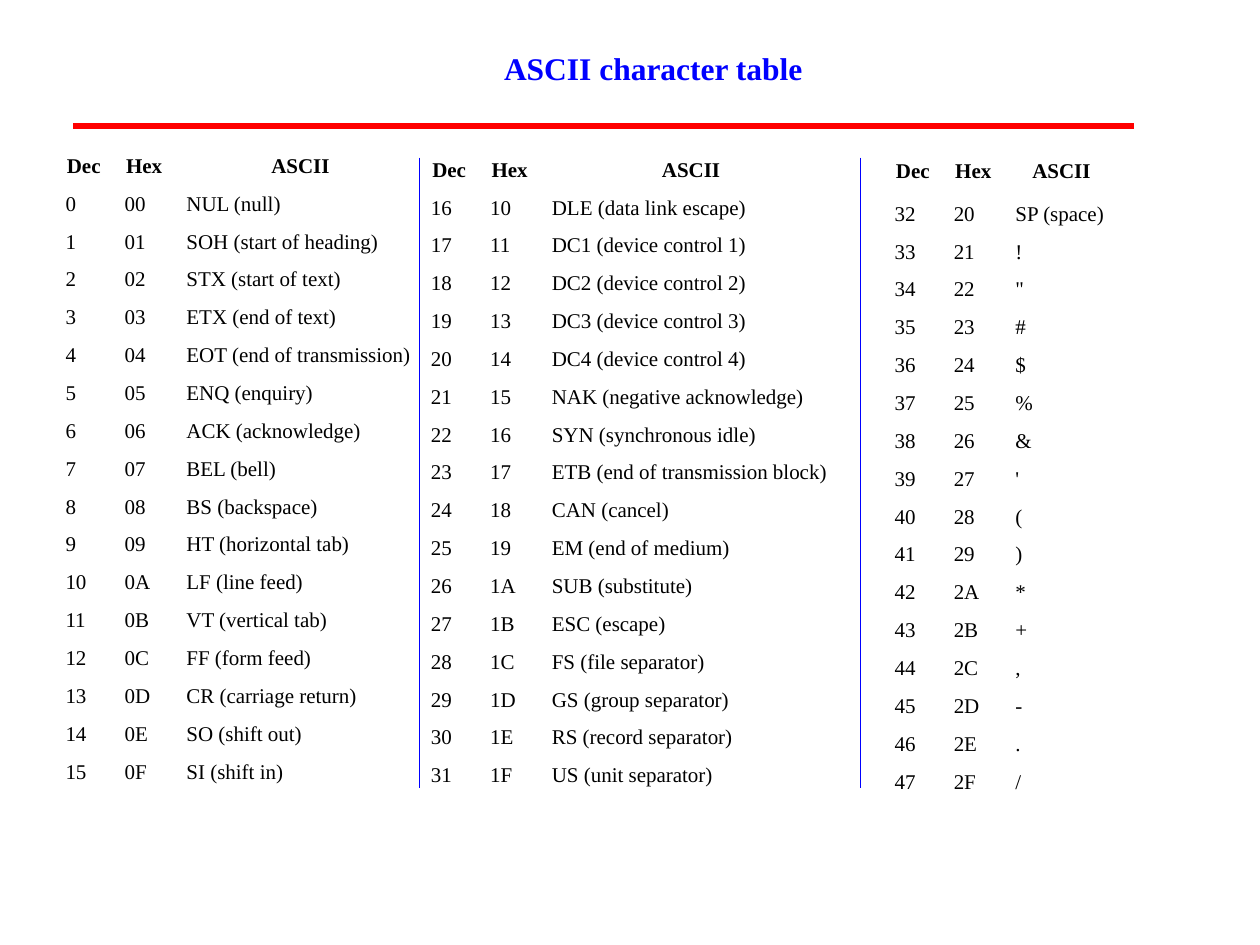
from pptx import Presentation
from pptx.dml.color import RGBColor
from pptx.enum.shapes import MSO_CONNECTOR
from pptx.enum.text import MSO_ANCHOR, PP_ALIGN
from pptx.oxml.ns import qn
from pptx.util import Inches, Pt
from lxml import etree

STRAIGHT = MSO_CONNECTOR.STRAIGHT
TOP, MIDDLE = MSO_ANCHOR.TOP, MSO_ANCHOR.MIDDLE
LEFT, CENTER = PP_ALIGN.LEFT, PP_ALIGN.CENTER
BLACK = RGBColor(0x00, 0x00, 0x00)
BLUE = RGBColor(0x00, 0x00, 0xFF)
RED = RGBColor(0xFF, 0x00, 0x00)
FONT = "Times New Roman"

TITLE = "ASCII character table"
HEADERS = ["Dec", "Hex", "ASCII"]
CONTROLS = [
    "NUL (null)", "SOH (start of heading)", "STX (start of text)",
    "ETX (end of text)", "EOT (end of transmission)", "ENQ (enquiry)",
    "ACK (acknowledge)", "BEL (bell)", "BS (backspace)",
    "HT (horizontal tab)", "LF (line feed)", "VT (vertical tab)",
    "FF (form feed)", "CR (carriage return)", "SO (shift out)",
    "SI (shift in)", "DLE (data link escape)", "DC1 (device control 1)",
    "DC2 (device control 2)", "DC3 (device control 3)",
    "DC4 (device control 4)", "NAK (negative acknowledge)",
    "SYN (synchronous idle)", "ETB (end of transmission block)",
    "CAN (cancel)", "EM (end of medium)", "SUB (substitute)",
    "ESC (escape)", "FS (file separator)", "GS (group separator)",
    "RS (record separator)", "US (unit separator)",
]
NAMES = CONTROLS + ["SP (space)"] + list("!\"#$%&'()*+,-./")

PER_TABLE = 16
BODY_H = 4.81
DEC_W, HEX_W = 0.47, 0.49
TABLES = [
    dict(left=0.42, top=1.17, name_w=1.99, head_h=0.3),
    dict(left=3.32, top=1.2, name_w=2.39, head_h=0.3),
    dict(left=7, top=1.17, name_w=0.91, head_h=0.38),
]
RULES = [
    ((0.58, 1), (9, 1), RED, 3),
    ((3.33, 1.25), (3.33, 6.25), BLUE, 0.75),
    ((6.83, 1.25), (6.83, 6.25), BLUE, 0.75),
]


def write(tf, text, size=12, color=BLACK, bold=False, align=LEFT):
    p = tf.paragraphs[0]
    p.alignment = align
    r = p.add_run()
    r.text = text
    r.font.name = FONT
    r.font.size = Pt(size)
    r.font.bold = bold
    r.font.color.rgb = color


def add_code_table(s, first, left, top, name_w, head_h):
    codes = range(first, first + PER_TABLE)
    rows = [HEADERS] + [[str(c), f"{c:02X}", NAMES[c]] for c in codes]
    widths = [DEC_W, HEX_W, name_w]
    heights = [head_h] + [BODY_H / PER_TABLE] * PER_TABLE
    table = s.shapes.add_table(
        len(rows), len(widths), Inches(left), Inches(top),
        Inches(sum(widths)), Inches(sum(heights))).table
    table.first_row = table.horz_banding = False
    for column, width in zip(table.columns, widths):
        column.width = Inches(width)
    for i, (values, height) in enumerate(zip(rows, heights)):
        table.rows[i].height = Inches(height)
        for j, value in enumerate(values):
            cell = table.cell(i, j)
            cell.fill.background()
            cell.vertical_anchor = MIDDLE
            cell.margin_right = Inches(0.08)
            write(cell.text_frame, value, bold=i == 0,
                  align=CENTER if i == 0 else LEFT)


def add_rule(s, start, end, color, width):
    line = s.shapes.add_connector(
        STRAIGHT, *(Inches(v) for v in start + end))
    line.line.color.rgb = color
    line.line.width = Pt(width)
    etree.SubElement(line._element.spPr, qn("a:effectLst"))


def main():
    prs = Presentation()
    prs.slide_width, prs.slide_height = Inches(10), Inches(7.5)
    s = prs.slides.add_slide(prs.slide_layouts[6])

    tf = s.shapes.add_textbox(
        Inches(4), Inches(0.33), Inches(2.38), Inches(0.7)).text_frame
    tf.word_wrap = False
    tf.vertical_anchor = TOP
    tf.margin_left = tf.margin_right = 0
    tf.margin_top = Inches(0.06)
    write(tf, TITLE, size=18, color=BLUE, bold=True)

    for i, layout in enumerate(TABLES):
        add_code_table(s, i * PER_TABLE, **layout)
    for rule in RULES:
        add_rule(s, *rule)
    prs.save("out.pptx")


if __name__ == "__main__":
    main()
